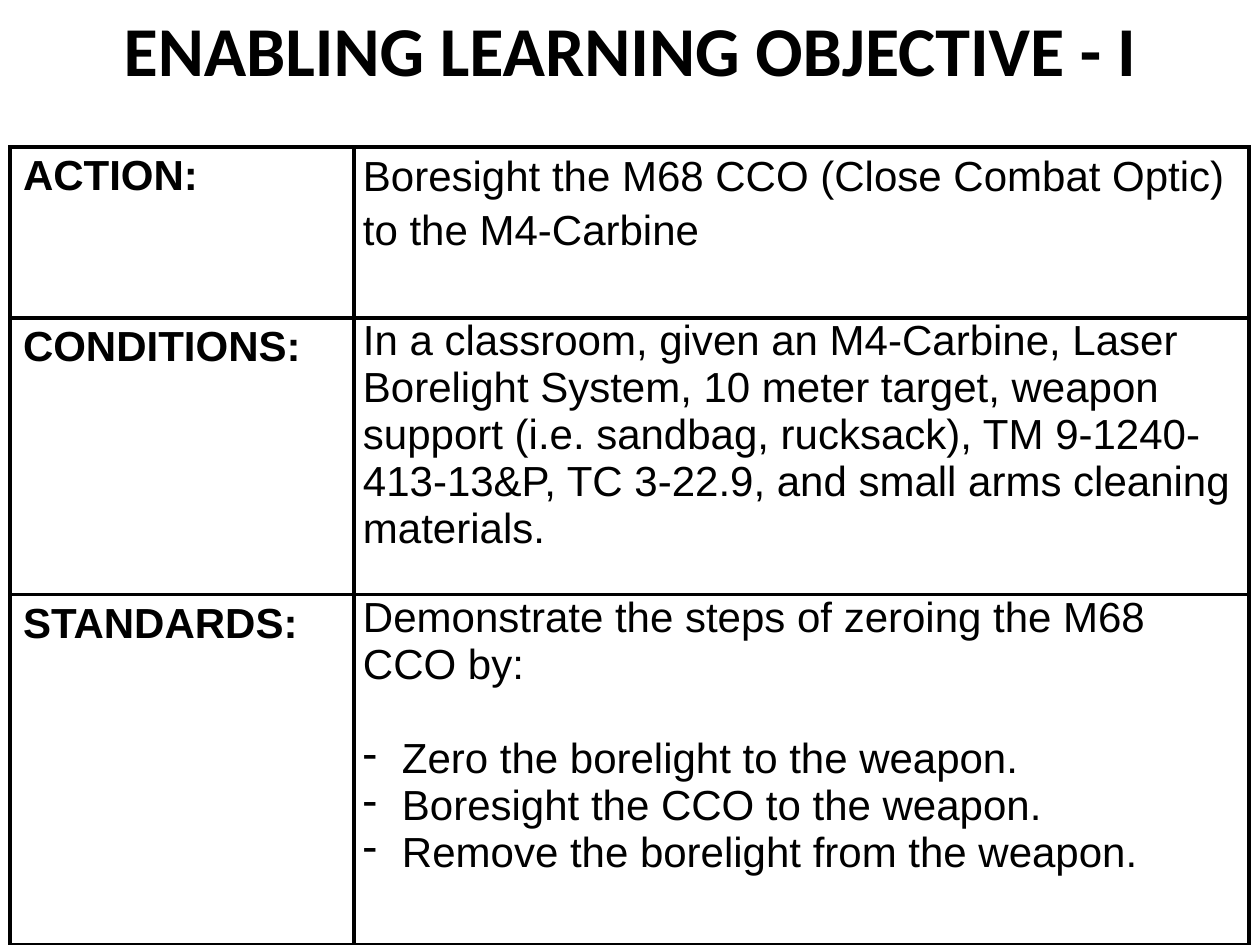
from lxml import etree
from pptx import Presentation
from pptx import util as u
from pptx.dml.color import RGBColor
from pptx.enum import text
from pptx.oxml import ns

INK = "000000"
ROWS = [
    (171, "ACTION:",
     ["Boresight the M68 CCO (Close Combat Optic) to the M4-Carbine"], [], 1.15),
    (277, "CONDITIONS:",
     ["In a classroom, given an M4-Carbine, Laser Borelight System, "
      "10 meter target, weapon support (i.e. sandbag, rucksack), "
      "TM 9-1240-413-13&P, TC 3-22.9, and small arms cleaning materials."], [], 1),
    (350, "STANDARDS:",
     ["Demonstrate the steps of zeroing the M68 CCO by:"],
     ["Zero the borelight to the weapon.",
      "Boresight the CCO to the weapon.",
      "Remove the borelight from the weapon."], 1),
]


def px(n):
    return u.Emu(round(n * 914400 / 126))


def color(code):
    return RGBColor.from_string(code)


def sub(node, tag, **attrs):
    return etree.SubElement(node, ns.qn(tag), attrs)


class Deck:
    """Holds the text style and the slide being built."""

    def __init__(self, slide):
        self.slide = slide

    def font(self, para, size, face, bold=False):
        font = para.font
        font.size, font.name, font.bold = u.Pt(size), face, bold
        font.color.rgb = color(INK)

    def title(self, words, x, y, w, h):
        frame = self.slide.shapes.add_textbox(px(x), px(y), px(w), px(h)).text_frame
        frame.word_wrap = True
        para = frame.paragraphs[0]
        para.text = words
        para.alignment = text.PP_ALIGN.CENTER
        self.font(para, 40, "Calibri", True)

    def cell(self, cell, lines, items=(), bold=False, pad=(9, 0), lead=1):
        cell.margin_left = cell.margin_right = px(pad[0])
        cell.margin_top = cell.margin_bottom = px(pad[1])
        self.border(cell)
        cell.fill.background()
        frame = cell.text_frame
        for i, line in enumerate([*lines, *items]):
            para = frame.add_paragraph() if i else frame.paragraphs[0]
            para.text = line
            para.line_spacing = lead
            if i >= len(lines):
                self.dash(para)
            if i == len(lines):
                para.space_before = u.Pt(27)
            self.font(para, 24, "Arial", bold)

    def dash(self, para):
        props = para._p.get_or_add_pPr()
        props.set("marL", str(px(39)))
        props.set("indent", str(-px(39)))
        sub(props, "a:buChar", char="-")

    def border(self, cell):
        props = cell._tc.get_or_add_tcPr()
        for side in "LRTB":
            line = sub(props, f"a:ln{side}", w=str(u.Pt(2)))
            sub(sub(line, "a:solidFill"), "a:srgbClr", val=INK)

    def table(self, rows, cols, x, y):
        high = sum(row[0] for row in rows)
        grid = self.slide.shapes.add_table(
            len(rows), len(cols), px(x), px(y), px(sum(cols)), px(high)).table
        grid.first_row = grid.horz_banding = False
        for col, wide in zip(grid.columns, cols):
            col.width = px(wide)
        for i, (tall, label, lines, items, lead) in enumerate(rows):
            grid.rows[i].height = px(tall)
            self.cell(grid.cell(i, 0), [label], bold=True, pad=(13, 6))
            self.cell(grid.cell(i, 1), lines, items, lead=lead)


def main():
    show = Presentation()
    show.slide_width, show.slide_height = px(1260), px(945)
    deck = Deck(show.slides.add_slide(show.slide_layouts[6]))
    deck.title("ENABLING LEARNING OBJECTIVE - I", 63, 0, 1134, 158)
    deck.table(ROWS, [344, 895], 10, 147)
    show.save("out.pptx")


if __name__ == "__main__":
    main()
